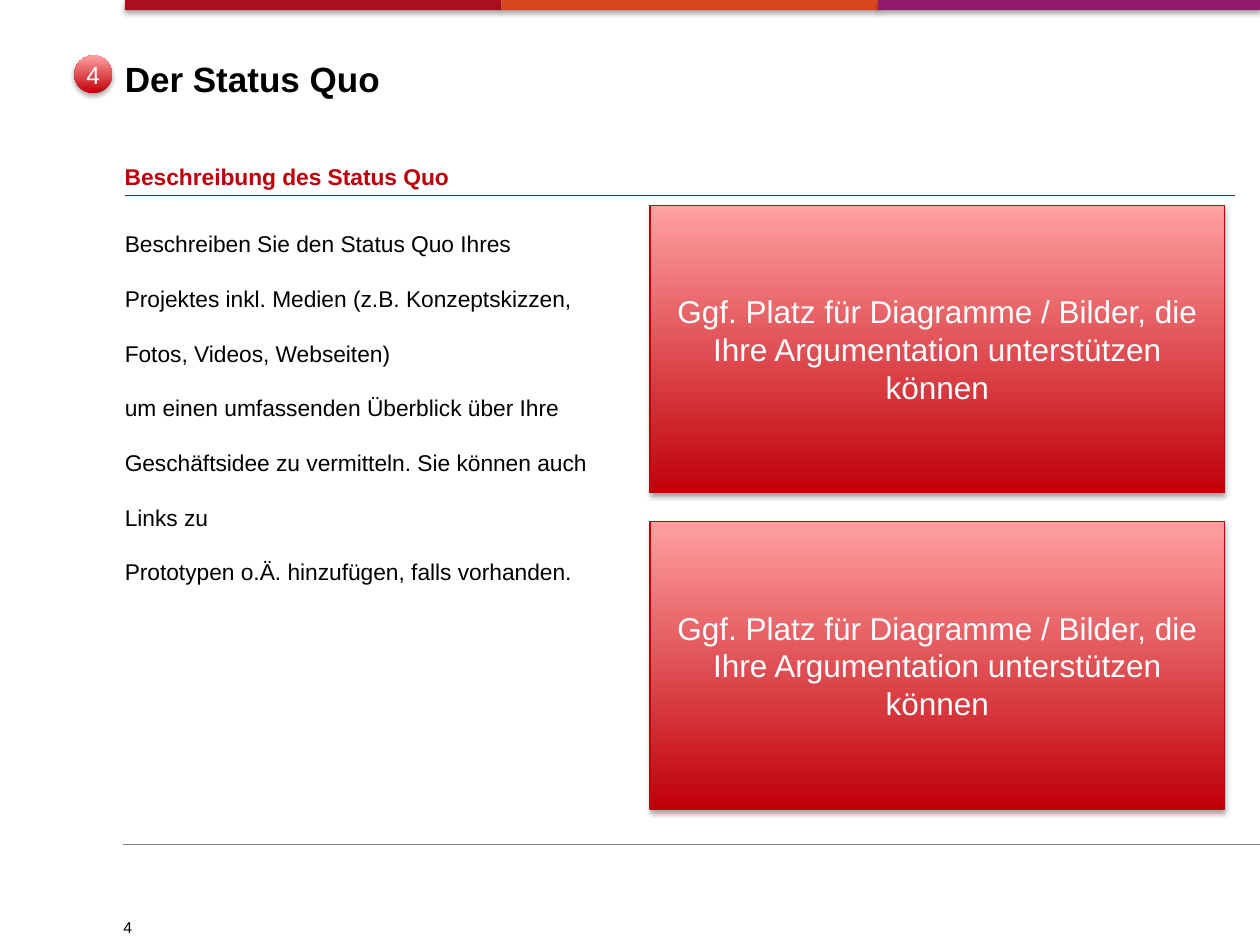
from dataclasses import dataclass

import pptx
import pptx.dml.color
import pptx.enum.shapes
import pptx.enum.text
import pptx.oxml
import pptx.oxml.ns
import pptx.util

SHAPE = pptx.enum.shapes.MSO_SHAPE
ALIGN = pptx.enum.text.PP_ALIGN
ANCHOR = pptx.enum.text.MSO_ANCHOR
Pt = pptx.util.Pt


@dataclass(frozen=True)
class Theme:
    font: str = "Arial"
    ink: str = "000000"
    paper: str = "FFFFFF"
    bars: tuple = ("AA0F1F", "D7471F", "901B6E")
    accent: str = "C00009"
    accent_light: str = "FFA0A0"
    panel_edge: str = "BC0009"
    heading_rule: str = "740B5C"
    footer_rule: str = "808080"
    title: int = 20
    panel: int = 18
    badge: int = 14
    body: int = 13
    page_number: int = 9


@dataclass(frozen=True)
class Box:
    """A region on a grid of 100 columns by 75 rows."""
    left: float
    top: float
    width: float
    height: float

    def emu(self):
        return [pptx.util.Inches(units / 10)
                for units in (self.left, self.top, self.width, self.height)]


THEME = Theme()
MARGIN = 9.9
CONTENT_WIDTH = 88.1


def color(value):
    return pptx.dml.color.RGBColor.from_string(value)


def write(shape, paragraphs, size, ink=THEME.ink, bold=False, align=ALIGN.LEFT,
          spacing=None, anchor=ANCHOR.TOP, wrap=True, inset=0):
    frame = shape.text_frame
    frame.word_wrap = wrap
    frame.auto_size = pptx.enum.text.MSO_AUTO_SIZE.NONE
    frame.vertical_anchor = anchor
    if inset is not None:
        frame.margin_left = frame.margin_right = inset
        frame.margin_top = frame.margin_bottom = inset
    for index, text in enumerate(paragraphs):
        paragraph = frame.add_paragraph() if index else frame.paragraphs[0]
        paragraph.alignment = align
        paragraph.line_spacing = spacing
        run = paragraph.add_run()
        run.text = text
        run.font.name = THEME.font
        run.font.size = Pt(size)
        run.font.bold = bold
        run.font.color.rgb = color(ink)


def add_text(slide, box, paragraphs, size, **options):
    write(slide.shapes.add_textbox(*box.emu()), paragraphs, size, **options)


def add_rule(slide, left, top, right, ink, weight):
    start, height, end = (pptx.util.Inches(units / 10) for units in (left, top, right))
    rule = slide.shapes.add_connector(
        pptx.enum.shapes.MSO_CONNECTOR.STRAIGHT, start, height, end, height)
    rule.line.color.rgb = color(ink)
    rule.line.width = Pt(weight)
    pptx.oxml.ns.qn("a:effectLst")
    rule._element.spPr.append(effect_list())


def effect_list(content=""):
    return pptx.oxml.parse_xml(
        f'<a:effectLst {pptx.oxml.ns.nsdecls("a")}>{content}</a:effectLst>')


def add_raised_shape(slide, kind, box):
    """Add a preset shape with no outline and a soft shadow below it."""
    shape = slide.shapes.add_shape(kind, *box.emu())
    shape.line.fill.background()
    shape._element.spPr.append(effect_list(
        f'<a:outerShdw blurRad="{Pt(3.1)}" dist="{Pt(1.8)}" dir="5400000" '
        'rotWithShape="0"><a:srgbClr val="000000"><a:alpha val="35000"/>'
        '</a:srgbClr></a:outerShdw>'))
    return shape


def fill_gradient(shape):
    shape.fill.gradient()
    shape.fill.gradient_angle = 90
    stops = zip(shape.fill.gradient_stops, (0, 1), (THEME.accent, THEME.accent_light))
    for stop, position, value in stops:
        stop.position = position
        stop.color.rgb = color(value)


def add_color_bar(slide, box):
    step = 29.9
    for index, value in enumerate(THEME.bars):
        left = box.left + index * step
        last = index == len(THEME.bars) - 1
        width = box.left + box.width - left if last else step
        bar = add_raised_shape(slide, SHAPE.RECTANGLE,
                               Box(left, box.top, width, box.height))
        bar.fill.solid()
        bar.fill.fore_color.rgb = color(value)


def add_footer(slide, box, number):
    add_rule(slide, box.left, box.top, box.left + box.width, THEME.footer_rule, 0.5)
    add_text(slide, Box(box.left, box.top + 5.7, 13.4, 1.9), [number],
             THEME.page_number, spacing=Pt(11.8), wrap=False)


def add_title(slide, box, text, number):
    title = slide.shapes.title
    title.left, title.top, title.width, title.height = box.emu()
    write(title, [text], THEME.title, bold=True, spacing=Pt(28))
    # Numbered badge in the margin beside the title
    badge = add_raised_shape(slide, SHAPE.OVAL, Box(box.left - 4, box.top + 0.4, 3, 3))
    fill_gradient(badge)
    write(badge, [number], THEME.badge, ink=THEME.paper, align=ALIGN.CENTER,
          anchor=ANCHOR.MIDDLE, wrap=False)


def add_description(slide, box, heading, paragraphs):
    add_text(slide, Box(box.left, box.top, 37, 2.4), [heading], THEME.body,
             ink=THEME.accent, bold=True)
    add_rule(slide, box.left, box.top + 2.6, box.left + box.width,
             THEME.heading_rule, 0.75)
    add_text(slide, Box(box.left, box.top + 3.2, 37.8, box.height - 3.2), paragraphs,
             THEME.body, spacing=2.0)


def add_media_panels(slide, box, texts, gap=2.3):
    height = (box.height - gap * (len(texts) - 1)) / len(texts)
    for index, text in enumerate(texts):
        panel = add_raised_shape(
            slide, SHAPE.RECTANGLE,
            Box(box.left, box.top + index * (height + gap), box.width, height))
        fill_gradient(panel)
        panel.line.color.rgb = color(THEME.panel_edge)
        panel.line.width = Pt(0.75)
        write(panel, [text], THEME.panel, ink=THEME.paper, align=ALIGN.CENTER,
              anchor=ANCHOR.MIDDLE, inset=None)


def main():
    presentation = pptx.Presentation()
    presentation.slide_width = pptx.util.Inches(10)
    presentation.slide_height = pptx.util.Inches(7.5)
    slide = presentation.slides.add_slide(presentation.slide_layouts[5])

    add_color_bar(slide, Box(MARGIN, 0, 100 - MARGIN, 0.8))
    add_footer(slide, Box(9.8, 67, 90.2, 8), "4")
    add_title(slide, Box(MARGIN, 4, CONTENT_WIDTH, 9.6), "Der Status Quo", "4")
    add_description(slide, Box(MARGIN, 12.9, CONTENT_WIDTH, 33.2),
                    "Beschreibung des Status Quo", [
        "Beschreiben Sie den Status Quo Ihres Projektes inkl. Medien "
        "(z.B. Konzeptskizzen, Fotos, Videos, Webseiten)",
        "um einen umfassenden Überblick über Ihre Geschäftsidee zu vermitteln. "
        "Sie können auch Links zu",
        "Prototypen o.Ä. hinzufügen, falls vorhanden.",
    ])
    panel_text = ("Ggf. Platz für Diagramme / Bilder, die Ihre Argumentation "
                  "unterstützen können")
    add_media_panels(slide, Box(51.6, 16.3, 45.6, 47.9), [panel_text] * 2)
    presentation.save("out.pptx")


if __name__ == "__main__":
    main()
